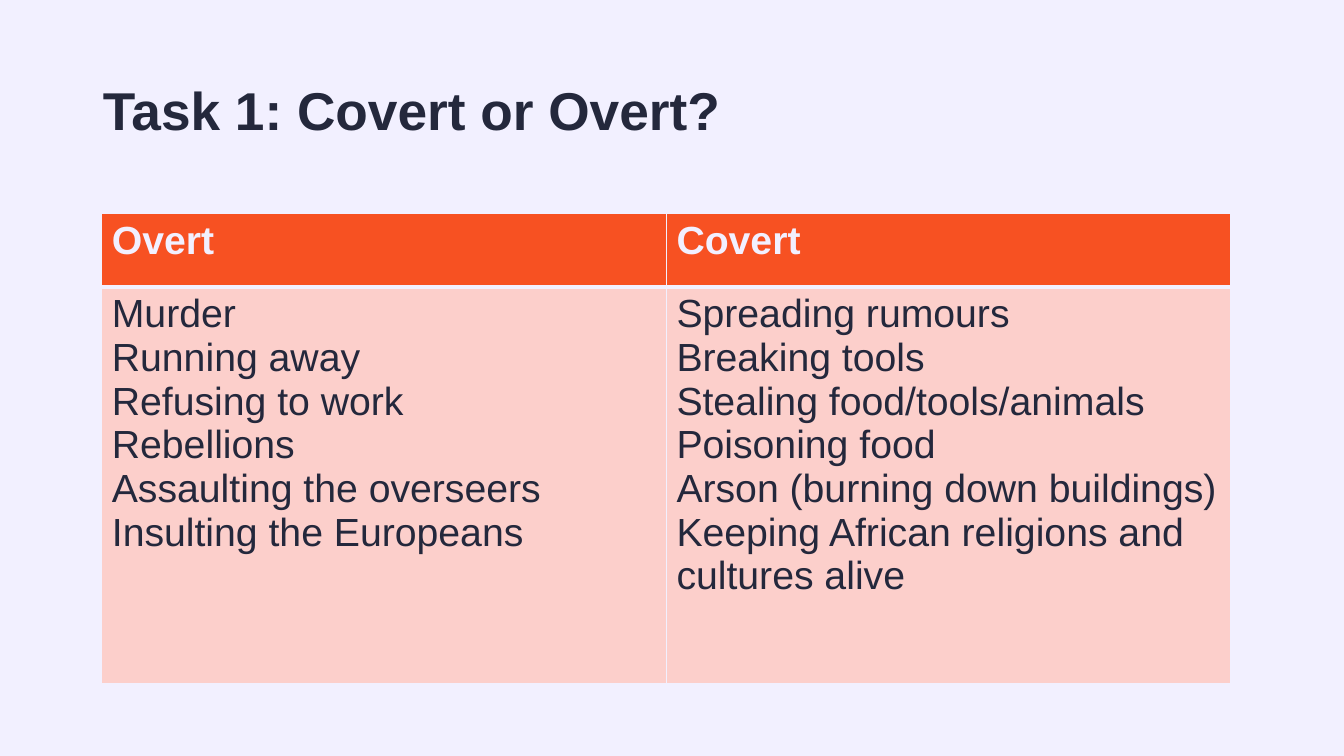
from lxml import etree
from pptx import Presentation
from pptx.dml.color import RGBColor
from pptx.enum.text import MSO_ANCHOR, PP_ALIGN
from pptx.oxml.ns import qn
from pptx.util import Inches, Pt

PAPER, INK, ORANGE, PINK = "F2F0FF", "24283C", "F75122", "FCCFCB"
COLUMNS = {
    "Overt": ["Murder", "Running away", "Refusing to work", "Rebellions",
              "Assaulting the overseers", "Insulting the Europeans"],
    "Covert": ["Spreading rumours", "Breaking tools", "Stealing food/tools/animals",
               "Poisoning food", "Arson (burning down buildings)",
               "Keeping African religions and cultures alive"],
}


def rgb(color):
    """Turn a hex string into a colour."""
    return RGBColor.from_string(color)


class SlideBuilder:
    """Hold the style and the current slide."""

    font = "Arial"

    def __init__(self, prs):
        """Add a title-only slide with a plain background."""
        self.slide = prs.slides.add_slide(prs.slide_layouts[5])
        fill = self.slide.background.fill
        fill.solid()
        fill.fore_color.rgb = rgb(PAPER)

    def text(self, tf, text, size, color, bold):
        """Set the text of a frame and format its runs."""
        tf.text = text
        for p in tf.paragraphs:
            for r in p.runs:
                r.font.name = self.font
                r.font.size = Pt(size)
                r.font.bold = bold
                r.font.color.rgb = rgb(color)

    def title(self, text, left, top, width, height):
        """Place and format the title placeholder."""
        sp = self.slide.shapes.title
        sp.left, sp.top = Inches(left), Inches(top)
        sp.width, sp.height = Inches(width), Inches(height)
        tf = sp.text_frame
        tf.word_wrap = True
        tf.vertical_anchor = MSO_ANCHOR.MIDDLE
        self.text(tf, text, 38, INK, True)
        p = tf.paragraphs[0]
        p.line_spacing = 0.9
        p.alignment = PP_ALIGN.LEFT

    def cell(self, cell, text, fill, color, bold, borders):
        """Fill a table cell with text, borders and a background."""
        self.text(cell.text_frame, text, 28, color, bold)
        tc_pr = cell._tc.get_or_add_tcPr()
        for side, width in zip("LRTB", borders):
            ln = etree.SubElement(tc_pr, qn(f"a:ln{side}"), w=str(Pt(width)))
            solid = etree.SubElement(ln, qn("a:solidFill"))
            etree.SubElement(solid, qn("a:srgbClr"), val=PAPER)
        cell.fill.solid()
        cell.fill.fore_color.rgb = rgb(fill)

    def table(self, columns, left, top, col_width, row_heights):
        """Add a table with a heading and a list in each column."""
        frame = self.slide.shapes.add_table(
            len(row_heights), len(columns), Inches(left), Inches(top),
            Inches(col_width * len(columns)), Inches(sum(row_heights)))
        table = frame.table
        for row, height in zip(table.rows, row_heights):
            row.height = Inches(height)
        for i, (heading, items) in enumerate(columns.items()):
            table.columns[i].width = Inches(col_width)
            self.cell(table.cell(0, i), heading, ORANGE, PAPER, True, (1, 1, 1, 3))
            self.cell(table.cell(1, i), "\n".join(items), PINK, INK, False, (1, 1, 3, 1))


def main():
    """Build and save the slide."""
    prs = Presentation()
    prs.slide_width, prs.slide_height = Inches(13.33), Inches(7.5)
    s = SlideBuilder(prs)
    s.title("Task 1: Covert or Overt?", 0.92, 0.4, 11.5, 1.45)
    s.table(COLUMNS, 1.01, 2.12, 5.6, (0.73, 3.93))
    prs.save("out.pptx")


if __name__ == "__main__":
    main()
